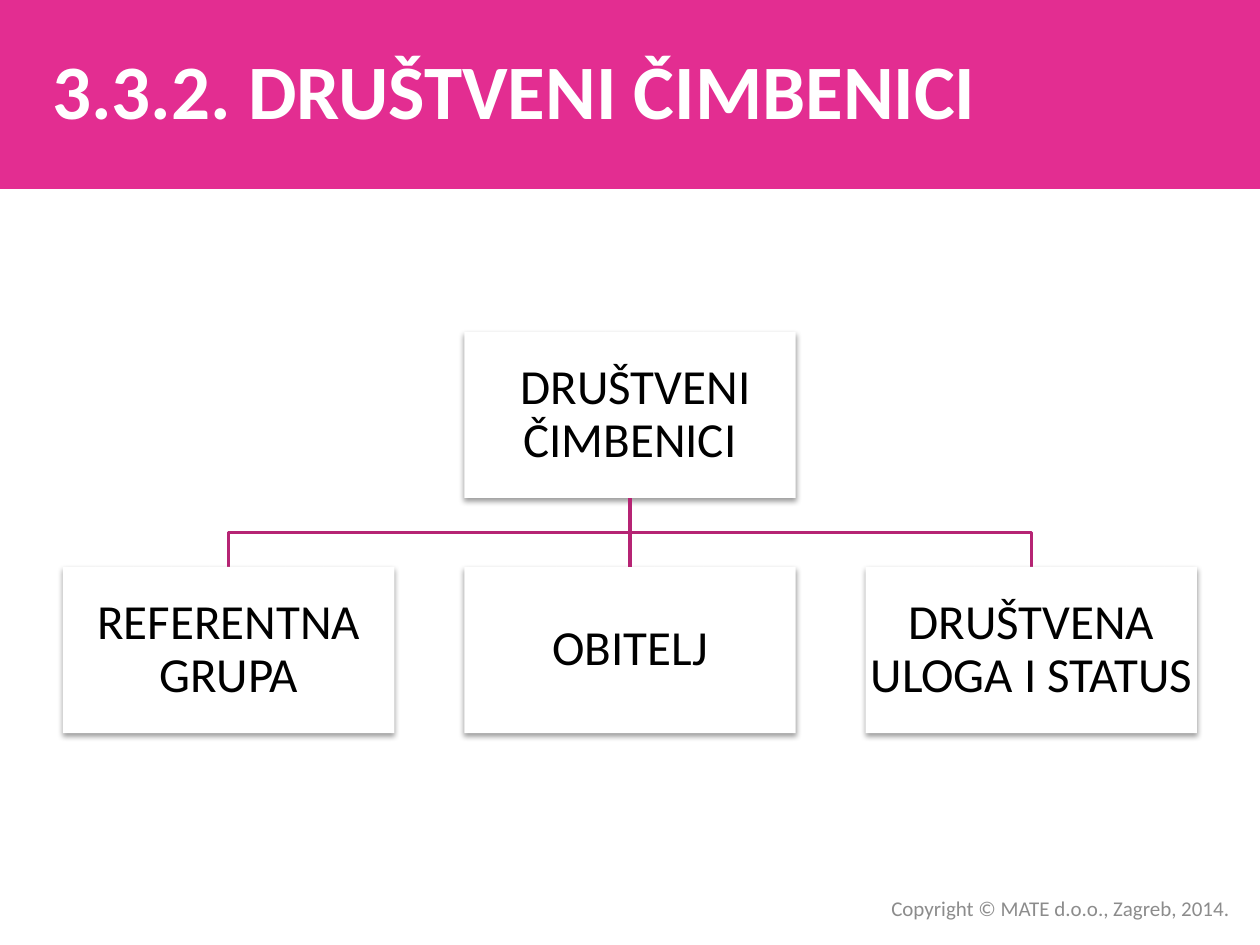
from lxml import etree
from pptx import Presentation
from pptx.dml.color import RGBColor
from pptx.enum.shapes import MSO_CONNECTOR, MSO_SHAPE
from pptx.enum.text import MSO_ANCHOR, PP_ALIGN
from pptx.oxml import parse_xml
from pptx.oxml.ns import nsdecls, qn
from pptx.util import Cm, Pt

# Content
TITLE = "3.3.2. DRUŠTVENI ČIMBENICI"
ROOT = " DRUŠTVENI ČIMBENICI"
FACTORS = ["REFERENTNA GRUPA", "OBITELJ", "DRUŠTVENA ULOGA I STATUS"]
COPYRIGHT = "Copyright © MATE d.o.o., Zagreb, 2014."

THEME = {
    "font": "Calibri",
    "band": RGBColor(0xE3, 0x2D, 0x91),
    "branch": RGBColor(0xB6, 0x24, 0x74),
    "white": RGBColor(0xFF, 0xFF, 0xFF),
    "text": RGBColor(0, 0, 0),
    "muted": RGBColor(0x8C, 0x8C, 0x8C),
    "title_size": Pt(44),
    "box_size": Pt(28),
    "footer_size": Pt(12),
    "branch_width": Pt(2),
}

# Measures of the chart
SLIDE_W, SLIDE_H = Cm(25.4), Cm(19.05)
BOX_W, BOX_H = Cm(6.68), Cm(3.35)
PITCH = Cm(8.09)
CENTER = SLIDE_W // 2
ROOT_TOP, FACTOR_TOP = Cm(6.69), Cm(11.43)
ROOT_BOTTOM = ROOT_TOP + BOX_H
BRANCH_Y = (ROOT_BOTTOM + FACTOR_TOP) // 2

SHADOW = f"""<a:effectLst {nsdecls("a")}>
  <a:outerShdw blurRad="40000" dist="20000" dir="5400000" rotWithShape="0">
    <a:srgbClr val="000000"><a:alpha val="38000"/></a:srgbClr>
  </a:outerShdw>
</a:effectLst>"""


def write(shape, text, size, color, align, bold=False):
    frame = shape.text_frame
    frame.text = text
    frame.word_wrap = True
    frame.vertical_anchor = MSO_ANCHOR.MIDDLE
    paragraph = frame.paragraphs[0]
    paragraph.alignment = align
    font = paragraph.runs[0].font
    font.name, font.size, font.bold = THEME["font"], size, bold
    font.color.rgb = color
    return frame


def add_panel(slide, left, top, width, height, fill):
    panel = slide.shapes.add_shape(MSO_SHAPE.RECTANGLE, left, top, width, height)
    panel.fill.solid()
    panel.fill.fore_color.rgb = fill
    panel.line.fill.background()
    panel.shadow.inherit = False
    return panel


def add_box(slide, text, center, top):
    box = add_panel(slide, center - BOX_W // 2, top, BOX_W, BOX_H, THEME["white"])
    properties = box._element.spPr
    properties.replace(properties.find(qn("a:effectLst")), parse_xml(SHADOW))
    frame = write(box, text, THEME["box_size"], THEME["text"], PP_ALIGN.CENTER)
    frame.margin_left = frame.margin_right = Cm(0.05)
    frame.margin_top = frame.margin_bottom = Cm(0.05)
    frame.paragraphs[0].line_spacing = 0.9
    return box


def style_branch(branch):
    branch.line.color.rgb = THEME["branch"]
    branch.line.width = THEME["branch_width"]


def add_elbow(slide, center):
    builder = slide.shapes.build_freeform(CENTER, ROOT_BOTTOM)
    builder.add_line_segments(
        [(CENTER, BRANCH_Y), (center, BRANCH_Y), (center, FACTOR_TOP)], close=False
    )
    elbow = builder.convert_to_shape()
    elbow.fill.background()
    elbow.shadow.inherit = False
    style_branch(elbow)


def add_stem(slide, parent, child):
    stem = slide.shapes.add_connector(
        MSO_CONNECTOR.STRAIGHT, CENTER, ROOT_BOTTOM, CENTER, FACTOR_TOP
    )
    stem.begin_connect(parent, 2)
    stem.end_connect(child, 0)
    style_branch(stem)
    etree.SubElement(stem._element.spPr, qn("a:effectLst"))


def main():
    deck = Presentation()
    deck.slide_width, deck.slide_height = SLIDE_W, SLIDE_H
    slide = deck.slides.add_slide(deck.slide_layouts[5])

    # Title on its band
    title = slide.shapes.title
    title.left, title.top, title.width, title.height = Cm(0), Cm(0.2), Cm(20.75), Cm(3.18)
    write(title, TITLE, THEME["title_size"], THEME["white"], PP_ALIGN.CENTER, bold=True)
    band = add_panel(slide, 0, 0, SLIDE_W, Cm(3.81), THEME["band"])
    title._element.addprevious(band._element)

    # Branches to the outer factors, then the boxes
    middle = len(FACTORS) // 2
    centers = [CENTER + (i - middle) * PITCH for i in range(len(FACTORS))]
    for center in centers:
        if center != CENTER:
            add_elbow(slide, center)
    root = add_box(slide, ROOT, CENTER, ROOT_TOP)
    boxes = [add_box(slide, text, center, FACTOR_TOP)
             for text, center in zip(FACTORS, centers)]
    add_stem(slide, root, boxes[middle])

    # Copyright line
    footer = slide.shapes.add_textbox(Cm(11.91), Cm(17.93), Cm(13.13), Cm(0.76))
    write(footer, COPYRIGHT, THEME["footer_size"], THEME["muted"], PP_ALIGN.RIGHT)

    deck.save("out.pptx")


if __name__ == "__main__":
    main()
